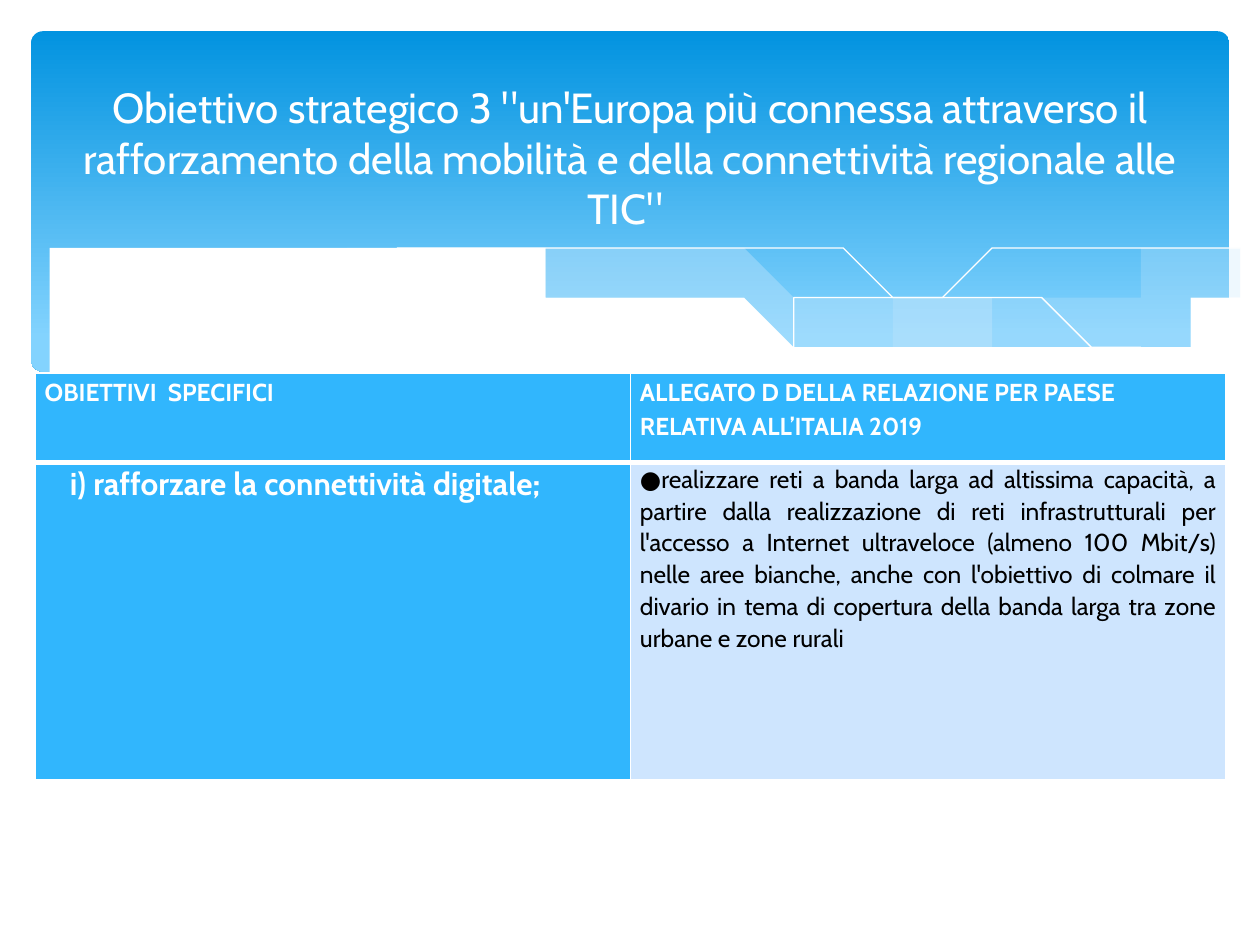
"""Build the slide on strategic objective 3: wave banner, title and objectives table."""
from lxml.etree import SubElement
from pptx import Presentation
from pptx.dml.color import RGBColor
from pptx.enum.shapes import MSO_SHAPE
from pptx.enum.text import MSO_ANCHOR, PP_ALIGN
from pptx.oxml.ns import qn
from pptx.util import Cm, Pt


def rgb(h):
    return RGBColor.from_string(h)


def smooth(pts, n=6):
    out = []
    ext = [pts[0], *pts, pts[-1]]
    for a, b, c, d in zip(ext, ext[1:], ext[2:], ext[3:]):
        for t in (i / n for i in range(n)):
            out.append(tuple(
                (2 * q + (u - o) * t + (2 * o - 5 * q + 4 * u - v) * t**2
                 + (3 * q - o - 3 * u + v) * t**3) / 2
                for o, q, u, v in zip(a, b, c, d)))
    return out + [pts[-1]]


prs = Presentation()
prs.slide_width, prs.slide_height = Cm(25.4), Cm(19.05)
s = prs.slides.add_slide(prs.slide_layouts[6])

sp = s.shapes.add_shape(MSO_SHAPE.ROUNDED_RECTANGLE, Cm(0.63), Cm(0.63), Cm(24.15), Cm(6.86))
sp.adjustments[0] = 0.034
sp.shadow.inherit = False
sp.line.fill.background()
sp.fill.gradient()
sp.fill.gradient_angle = 270
for stop, (pos, color) in zip(sp.fill.gradient_stops, [(0, "0293E0"), (0.9, "83D3FE")]):
    stop.position = pos
    stop.color.rgb = rgb(color)

right_top = [(24.79, 5.08), (24.08, 5.18), (23.01, 5.41), (21.87, 5.66), (19.79, 6.15),
             (17.93, 6.53), (16.79, 6.73)]
right_bottom = [(16.79, 6.73), (17.91, 6.88), (19.23, 7.01), (20.4, 7.06), (21.69, 7.01),
                (22.99, 6.83), (23.93, 6.58), (24.79, 6.27)]
middle_top = [(22.68, 6.93), (20.5, 6.6), (17.93, 6.1), (15.98, 5.64), (14.1, 5.21),
              (12.42, 4.98), (10.67, 4.75), (9.17, 4.7), (7.26, 4.85)]
middle_bottom = [(7.26, 4.85), (9.19, 5.16), (11.4, 5.64), (13.46, 6.1), (15.7, 6.55),
                 (17.65, 6.86), (19.33, 7.04), (20.78, 7.06), (21.77, 7.04), (22.68, 6.93)]
falling = [(7.85, 4.95), (8.97, 4.8), (10.57, 4.75), (12.42, 4.83), (14.78, 5.08),
           (16.89, 5.41), (19.3, 5.92), (21.11, 6.38), (23.04, 6.91)]
rising = [(15.57, 6.53), (17.65, 5.97), (19.71, 5.49), (22, 5.05), (23.47, 4.83), (24.77, 4.7)]
front = [(24.82, 6.25), (23.62, 6.65), (22.23, 6.93), (20.55, 7.04), (18.44, 6.91),
         (15.9, 6.55), (13.44, 6.07), (11.35, 5.59), (9.27, 5.13), (7.42, 4.83), (5.84, 4.7),
         (4.5, 4.67), (3.02, 4.75), (1.93, 4.95), (1.17, 5.16), (0.58, 5.41)]
waves = [
    (smooth(right_top) + smooth(right_bottom), "C6E7FC", 29),
    (smooth(middle_top) + smooth(middle_bottom), "C6E7FC", 40),
    (smooth(falling), None, None),
    (smooth(rising), None, None),
    (smooth(front) + [(0.58, 8.36), (24.82, 8.36)], "FFFFFF", 100),
]
for pts, color, alpha in waves:
    fb = s.shapes.build_freeform(*pts[0], scale=Cm(1))
    fb.add_line_segments(pts[1:], close=color is not None)
    sp = fb.convert_to_shape()
    sp.shadow.inherit = False
    if color:
        sp.line.fill.background()
        sp.fill.solid()
        sp.fill.fore_color.rgb = rgb(color)
        clr = sp.fill._xPr.find(qn("a:solidFill"))[0]
        SubElement(clr, qn("a:alpha"), val=str(alpha * 1000))
    else:
        sp.fill.background()
        sp.line.color.rgb = rgb("FFFFFF")
        sp.line.width = Pt(0)

tf = s.shapes.add_textbox(Cm(1.27), Cm(0.94), Cm(22.86), Cm(3.48)).text_frame
for k, v in {"word_wrap": True, "vertical_anchor": MSO_ANCHOR.TOP,
             "margin_top": Cm(0.71), "margin_bottom": 0}.items():
    setattr(tf, k, v)
p = tf.paragraphs[0]
p.alignment = PP_ALIGN.CENTER
r = p.add_run()
r.text = ("Obiettivo strategico 3 \"un'Europa più connessa attraverso il rafforzamento "
          "della mobilità e della connettività regionale alle TIC\" ")
for k, v in {"size": Pt(24), "name": "Cabin"}.items():
    setattr(r.font, k, v)
r.font.color.rgb = rgb("FFFFFF")

tbl = s.shapes.add_table(2, 2, Cm(0.71), Cm(7.52), Cm(24), Cm(8.2)).table
tbl.horz_banding = False
for row, h in zip(tbl.rows, (1.8, 6.4)):
    row.height = Cm(h)

head = {"line_spacing": 1.15}
body = {"line_spacing": 1.07, "space_after": Pt(8)}
cells = [
    (0, 0, "OBIETTIVI  SPECIFICI", "31B6FD", "FFFFFF", head, 14, True),
    (0, 1, "ALLEGATO D DELLA RELAZIONE PER PAESE RELATIVA ALL’ITALIA 2019",
     "31B6FD", "FFFFFF", head, 14, True),
    (1, 0, "i) rafforzare la connettività digitale;", "31B6FD", "FFFFFF", body, 18, True),
    (1, 1, "●realizzare reti a banda larga ad altissima capacità, a partire dalla "
     "realizzazione di reti infrastrutturali per l'accesso a Internet ultraveloce "
     "(almeno 100 Mbit/s) nelle aree bianche, anche con l'obiettivo di colmare il divario "
     "in tema di copertura della banda larga tra zone urbane e zone rurali",
     "CEE5FE", "000000", {**body, "alignment": PP_ALIGN.JUSTIFY}, 14, False),
]
for i, j, text, fill, color, fmt, size, bold in cells:
    cell = tbl.cell(i, j)
    for k, v in {"margin_left": Cm(0.19), "margin_right": Cm(0.19),
                 "margin_top": 0, "margin_bottom": 0}.items():
        setattr(cell, k, v)
    tcPr = cell._tc.get_or_add_tcPr()
    for side in "LRTB":
        thick = (i, side) in ((0, "B"), (1, "T"))
        ln = SubElement(tcPr, qn(f"a:ln{side}"), w=str(Pt(3 if thick else 1)))
        SubElement(SubElement(ln, qn("a:solidFill")), qn("a:srgbClr"), val="FFFFFF")
    cell.fill.solid()
    cell.fill.fore_color.rgb = rgb(fill)
    p = cell.text_frame.paragraphs[0]
    for k, v in fmt.items():
        setattr(p, k, v)
    if (i, j) == (1, 0):
        p._p.get_or_add_pPr().set("marL", str(Cm(0.51)))
    r = p.add_run()
    r.text = text
    for k, v in {"size": Pt(size), "bold": bold, "name": "Cabin"}.items():
        setattr(r.font, k, v)
    r.font.color.rgb = rgb(color)

prs.save("out.pptx")
